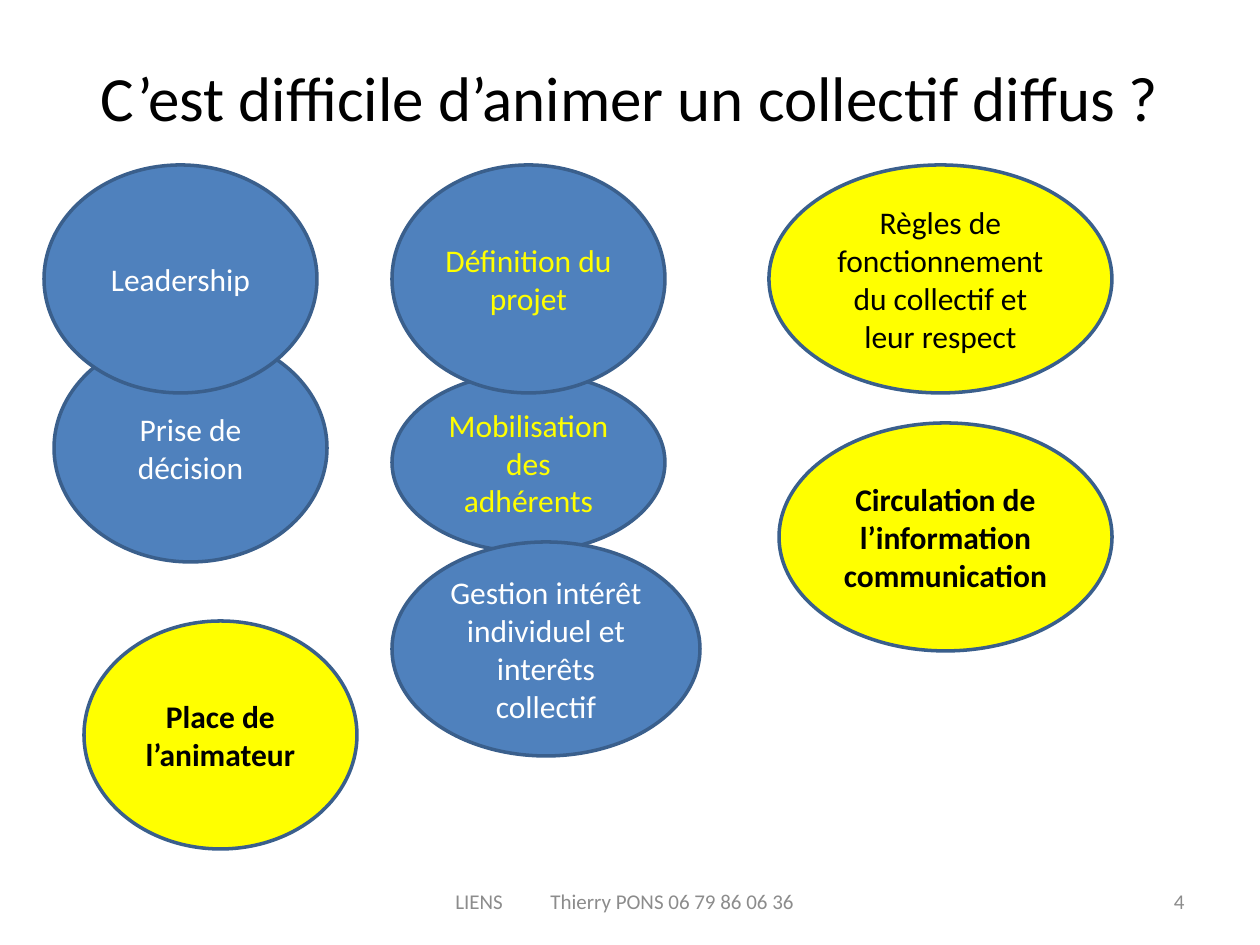
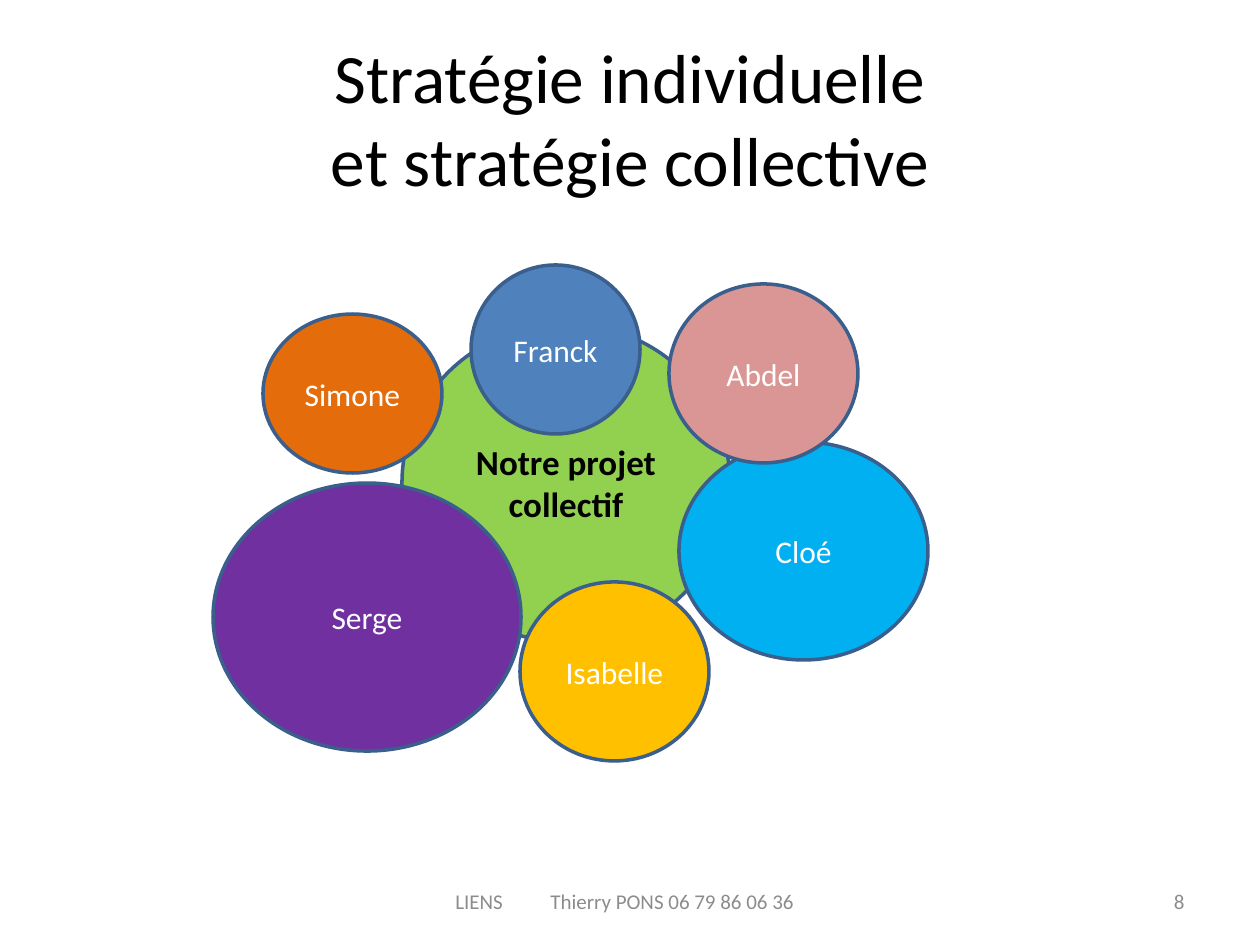
from lxml import etree
from pptx import Presentation
from pptx.dml.color import RGBColor
from pptx.enum.shapes import MSO_SHAPE
from pptx.enum.text import MSO_ANCHOR, MSO_AUTO_SIZE, PP_ALIGN
from pptx.oxml.ns import qn
from pptx.util import Emu, Pt

OVAL = MSO_SHAPE.OVAL
MIDDLE = MSO_ANCHOR.MIDDLE
NO_AUTOFIT = MSO_AUTO_SIZE.NONE
LEFT, CENTER, RIGHT = PP_ALIGN.LEFT, PP_ALIGN.CENTER, PP_ALIGN.RIGHT

PX_PER_INCH = 126
EMU_PER_INCH = 914400
SLIDE_WIDTH, SLIDE_HEIGHT = 1260, 945
FONT = "Calibri"
TITLE_ONLY_LAYOUT = 5

BLACK = RGBColor(0x00, 0x00, 0x00)
WHITE = RGBColor(0xFF, 0xFF, 0xFF)
GREY = RGBColor(0x8C, 0x8C, 0x8C)
YELLOW = RGBColor(0xFF, 0xFF, 0x00)
BLUE = RGBColor(0x4F, 0x81, 0xBD)
OUTLINE = RGBColor(0x3A, 0x5F, 0x8C)
GREEN = RGBColor(0x92, 0xD0, 0x50)
ORANGE = RGBColor(0xE4, 0x6C, 0x0A)
PURPLE = RGBColor(0x70, 0x30, 0xA0)
GOLD = RGBColor(0xFF, 0xC0, 0x00)
SKY = RGBColor(0x00, 0xB0, 0xF0)
PINK = RGBColor(0xD9, 0x96, 0x94)

LEFT_COLUMN, MIDDLE_COLUMN = 44, 392
TOP_ROW = 165
OVAL_WIDTH, OVAL_HEIGHT = 273, 228

DIFFICULTIES = [
    ("Règles de fonctionnement du collectif et leur respect",
     (769, TOP_ROW, 343, OVAL_HEIGHT), YELLOW, BLACK, False),
    ("Place de l’animateur",
     (LEFT_COLUMN + 40, 621, OVAL_WIDTH, OVAL_HEIGHT), YELLOW, BLACK, True),
    ("Circulation de l’information communication",
     (779, 423, 333, OVAL_HEIGHT), YELLOW, BLACK, True),
    ("Mobilisation des adhérents",
     (MIDDLE_COLUMN, 373, OVAL_WIDTH, 179), BLUE, YELLOW, False),
    ("Gestion intérêt individuel et interêts collectif",
     (MIDDLE_COLUMN, 542, 308, 214), BLUE, WHITE, False),
    ("Définition du projet",
     (MIDDLE_COLUMN, TOP_ROW, OVAL_WIDTH, OVAL_HEIGHT), BLUE, YELLOW, False),
    ("Prise de décision",
     (LEFT_COLUMN + 10, 334, OVAL_WIDTH, OVAL_HEIGHT), BLUE, WHITE, False),
    ("Leadership",
     (LEFT_COLUMN, TOP_ROW, OVAL_WIDTH, OVAL_HEIGHT), BLUE, WHITE, False),
]

MEMBERS = [
    ("Simone", (263, 314, 179, 159), ORANGE),
    ("Serge", (213, 483, 308, 268), PURPLE),
    ("Isabelle", (520, 582, 189, 179), GOLD),
    ("Cloé", (679, 442, 249, 218), SKY),
    ("Abdel", (669, 284, 189, 179), PINK),
    ("Franck", (471, 265, 169, 169), BLUE),
]


def px(length):
    return Emu(round(length * EMU_PER_INCH / PX_PER_INCH))


def write(shape, text, size, color, align=CENTER, bold=False):
    frame = shape.text_frame
    frame.text = text
    frame.word_wrap = True
    frame.auto_size = NO_AUTOFIT
    frame.vertical_anchor = MIDDLE
    paragraph = frame.paragraphs[0]
    paragraph.alignment = align
    paragraph.font.name = FONT
    paragraph.font.size = Pt(size)
    paragraph.font.bold = bold
    paragraph.font.color.rgb = color
    return paragraph


def add_label(slide, text, box, align):
    label = slide.shapes.add_textbox(*map(px, box))
    return write(label, text, 12, GREY, align)


def set_tab_stop(paragraph, position):
    properties = paragraph.font._element.getparent()
    tab_list = etree.Element(qn("a:tabLst"))
    etree.SubElement(tab_list, qn("a:tab"), pos=str(px(position)), algn="l")
    properties.insert(0, tab_list)


def add_footer(slide, number):
    footer = add_label(slide, "LIENS\tThierry PONS 06 79 86 06 36", (443, 876, 400, 50), LEFT)
    set_tab_stop(footer, 95)
    add_label(slide, str(number), (903, 876, 294, 50), RIGHT)


def add_titled_slide(presentation, title_text, title_height, title_size, number):
    slide = presentation.slides.add_slide(presentation.slide_layouts[TITLE_ONLY_LAYOUT])
    title = slide.shapes.title
    title.left, title.top, title.width, title.height = map(px, (63, 38, 1134, title_height))
    write(title, title_text, title_size, BLACK)
    add_footer(slide, number)
    return slide


def add_oval(slide, text, box, fill, color=WHITE, bold=False, size=18):
    oval = slide.shapes.add_shape(OVAL, *map(px, box))
    oval.shadow.inherit = False
    oval.fill.solid()
    oval.fill.fore_color.rgb = fill
    oval.line.color.rgb = OUTLINE
    oval.line.width = Pt(2)
    write(oval, text, size, color, bold=bold)


def main():
    presentation = Presentation()
    presentation.slide_width = px(SLIDE_WIDTH)
    presentation.slide_height = px(SLIDE_HEIGHT)

    difficulties_slide = add_titled_slide(
        presentation, "C’est difficile d’animer un collectif diffus ?", 117, 36, 4)
    for difficulty in DIFFICULTIES:
        add_oval(difficulties_slide, *difficulty)

    strategy_slide = add_titled_slide(
        presentation, "Stratégie individuelle\vet stratégie collective", 158, 39.6, 8)
    add_oval(strategy_slide, "Notre projet collectif", (402, 324, 328, 318), GREEN, BLACK, True, 20)
    for member in MEMBERS:
        add_oval(strategy_slide, *member)

    presentation.save("out.pptx")


if __name__ == "__main__":
    main()
